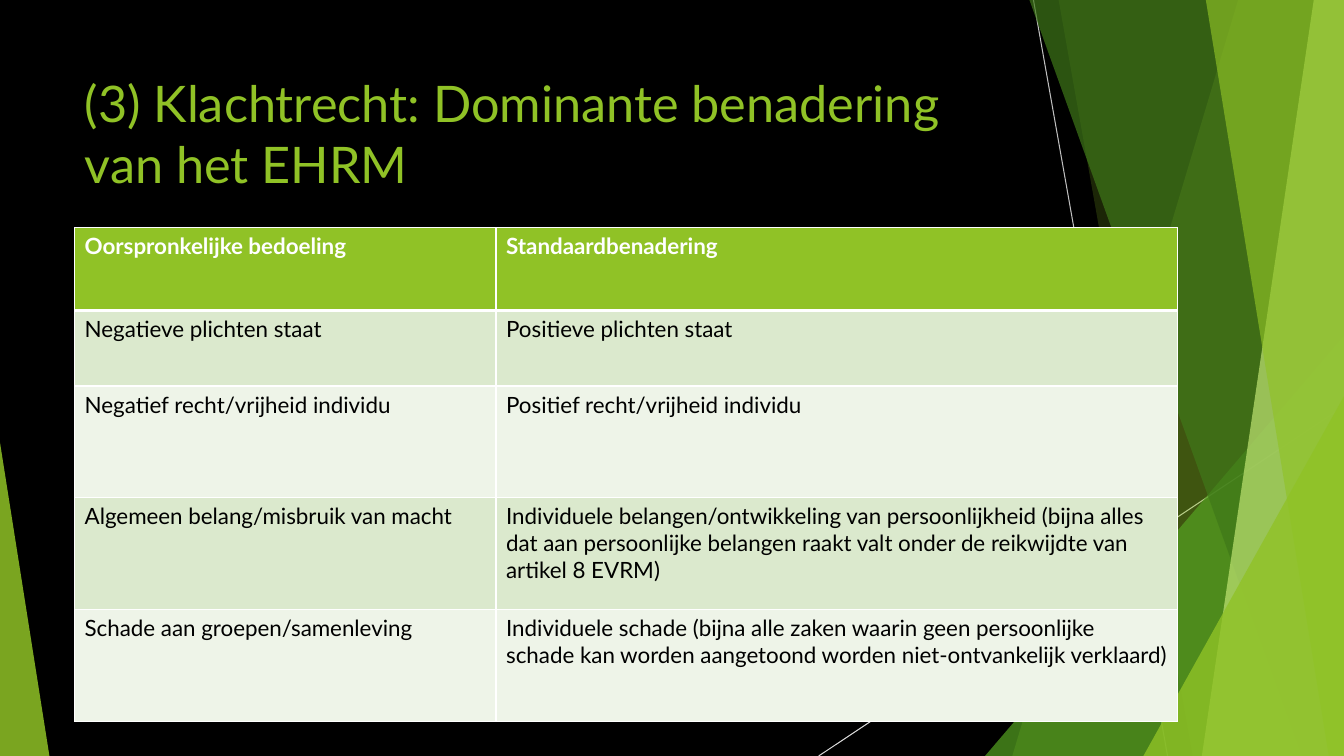
import pptx
import pptx.dml.color
import pptx.enum.shapes
import pptx.enum.text
import pptx.oxml
import pptx.oxml.ns
import pptx.util

Inches = pptx.util.Inches
Pt = pptx.util.Pt
RGBColor = pptx.dml.color.RGBColor
Shapes = pptx.enum.shapes.MSO_SHAPE

WIDTH, HEIGHT = 13.33, 7.5
BLACK = RGBColor(0x00, 0x00, 0x00)
WHITE = RGBColor(0xFF, 0xFF, 0xFF)
LIME = RGBColor(0x90, 0xC2, 0x26)
GREEN = RGBColor(0x54, 0xA0, 0x21)
FOREST = RGBColor(0x3F, 0x78, 0x19)
PALE_LIME = RGBColor(0xC0, 0xE4, 0x74)
BAND_DARK = RGBColor(0xDB, 0xE9, 0xCD)
BAND_LIGHT = RGBColor(0xEE, 0xF4, 0xE8)
GREY = RGBColor(0xBF, 0xBF, 0xBF)
LIGHT_GREY = RGBColor(0xD9, 0xD9, 0xD9)

ROWS = [
    ("Oorspronkelijke bedoeling", "Standaardbenadering"),
    ("Negatieve plichten staat", "Positieve plichten staat"),
    ("Negatief recht/vrijheid individu", "Positief recht/vrijheid individu"),
    ("Algemeen belang/misbruik van macht",
     "Individuele belangen/ontwikkeling van persoonlijkheid (bijna alles dat aan "
     "persoonlijke belangen raakt valt onder de reikwijdte van artikel 8 EVRM)"),
    ("Schade aan groepen/samenleving",
     "Individuele schade (bijna alle zaken waarin geen persoonlijke schade kan worden "
     "aangetoond worden niet-ontvankelijk verklaard)"),
]


class SlideBuilder:
    """Draws the elements of one slide in a shared style."""

    font = "Lato"

    def __init__(self, deck):
        self.page = deck.slides.add_slide(deck.slide_layouts[5])
        background = self.page.background.fill
        background.solid()
        background.fore_color.rgb = BLACK

    def style_text(self, frame, size, color, bold=False):
        for para in frame.paragraphs:
            para.alignment = pptx.enum.text.PP_ALIGN.LEFT
            para.font.name = self.font
            para.font.size = Pt(size)
            para.font.bold = bold
            para.font.color.rgb = color

    def title(self, text, left, top, width, height):
        box = self.page.shapes.title
        box.left, box.top = Inches(left), Inches(top)
        box.width, box.height = Inches(width), Inches(height)
        frame = box.text_frame
        frame.text = text
        frame.word_wrap = True
        frame.auto_size = pptx.enum.text.MSO_AUTO_SIZE.NONE
        frame.vertical_anchor = pptx.enum.text.MSO_ANCHOR.TOP
        self.style_text(frame, 36, LIME)

    def line(self, start, end, color):
        line = self.page.shapes.add_connector(
            pptx.enum.shapes.MSO_CONNECTOR.STRAIGHT,
            *(Inches(value) for value in start + end))
        line.line.color.rgb = color
        line.line.width = Pt(0.75)
        properties = line.element.spPr
        properties.append(pptx.oxml.parse_xml(
            f'<a:effectLst {pptx.oxml.ns.nsdecls("a")}/>'))

    def paint(self, shape, color, opacity):
        shape.shadow.inherit = False
        shape.line.fill.background()
        shape.fill.solid()
        shape.fill.fore_color.rgb = color
        swatch = shape.element.spPr.find(".//" + pptx.oxml.ns.qn("a:srgbClr"))
        swatch.append(pptx.oxml.parse_xml(
            f'<a:alpha {pptx.oxml.ns.nsdecls("a")} val="{opacity * 1000}"/>'))

    def panel(self, top_left, bottom_left, color, opacity):
        outline = self.page.shapes.build_freeform(Inches(top_left), 0)
        corners = [(WIDTH, 0), (WIDTH, HEIGHT), (bottom_left, HEIGHT)]
        outline.add_line_segments([(Inches(x), Inches(y)) for x, y in corners])
        self.paint(outline.convert_to_shape(), color, opacity)

    def triangle(self, left, top, width, apex, color, opacity):
        shape = self.page.shapes.add_shape(
            Shapes.ISOSCELES_TRIANGLE, Inches(left), Inches(top),
            Inches(width), Inches(HEIGHT - top))
        shape.adjustments[0] = apex
        self.paint(shape, color, opacity)

    def border(self, cell, side, width):
        cell._tc.get_or_add_tcPr().append(pptx.oxml.parse_xml(
            f'<a:ln{side} {pptx.oxml.ns.nsdecls("a")} w="{Pt(width)}"><a:solidFill>'
            f'<a:srgbClr val="{WHITE}"/></a:solidFill></a:ln{side}>'))

    def table(self, rows, left, top, widths, heights):
        table = self.page.shapes.add_table(
            len(rows), len(widths), Inches(left), Inches(top),
            Inches(sum(widths)), Inches(sum(heights))).table
        for column, width in zip(table.columns, widths):
            column.width = Inches(width)
        for index, (texts, height) in enumerate(zip(rows, heights)):
            table.rows[index].height = Inches(height)
            header = index == 0
            fill = LIME if header else (BAND_LIGHT, BAND_DARK)[index % 2]
            for cell, text in zip(table.rows[index].cells, texts):
                cell.text = text
                self.style_text(cell.text_frame, 16, WHITE if header else BLACK, header)
                for side in "LRTB":
                    heavy = (index, side) in ((0, "B"), (1, "T"))
                    self.border(cell, side, 3 if heavy else 1)
                cell.fill.solid()
                cell.fill.fore_color.rgb = fill


def main():
    deck = pptx.Presentation()
    deck.slide_width, deck.slide_height = Inches(WIDTH), Inches(HEIGHT)
    slide = SlideBuilder(deck)
    slide.line((10.25, 0), (11.58, HEIGHT), GREY)
    slide.line((WIDTH, 4.03), (8.12, HEIGHT), LIGHT_GREY)
    slide.panel(12.28, 10.04, LIME, 30)
    slide.panel(10.5, 11.83, LIME, 20)
    slide.triangle(9.77, 3.33, 3.56, 1, GREEN, 72)
    slide.panel(10.21, 12.91, FOREST, 70)
    slide.panel(13.03, 11.92, PALE_LIME, 70)
    slide.panel(11.96, 13.18, LIME, 65)
    slide.triangle(11.34, 3.93, 1.99, 1, LIME, 80)
    slide.triangle(0, 4.39, 0.49, 0, LIME, 85)
    slide.title("(3) Klachtrecht: Dominante benadering van het EHRM", 0.74, 0.67, 9.4, 1.44)
    slide.table(ROWS, 0.74, 2.26, [4.18, 6.76], [0.82, 0.75] + [1.11] * 3)
    deck.save("out.pptx")


if __name__ == "__main__":
    main()
